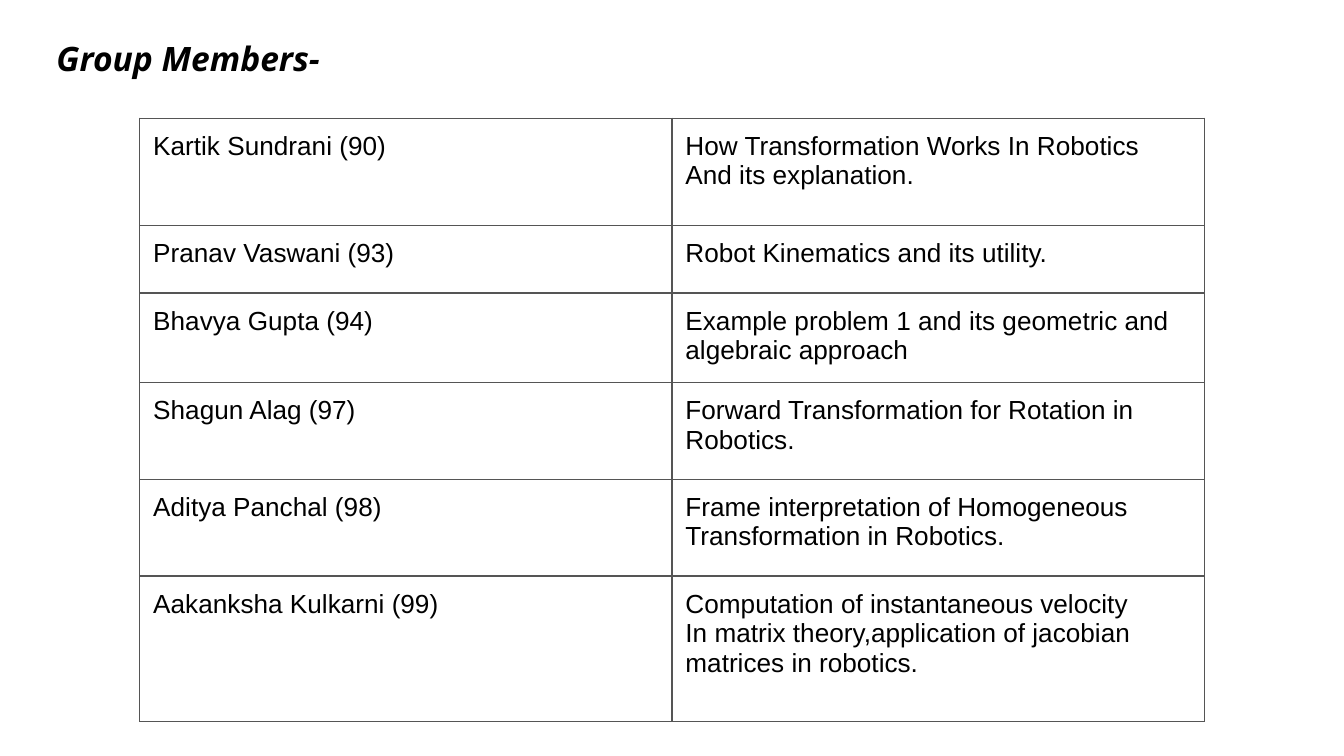
from lxml.etree import SubElement
from pptx import Presentation
from pptx.dml.color import RGBColor
from pptx.enum.text import MSO_ANCHOR, MSO_AUTO_SIZE, PP_ALIGN
from pptx.oxml.ns import qn
from pptx.util import Inches, Pt

BLACK = RGBColor(0x00, 0x00, 0x00)
GRAY = RGBColor(0x55, 0x55, 0x55)
INSET = Inches(0.1)

# Row height, member, lines of the topic
MEMBERS = [
    (0.8, "Kartik Sundrani (90)",
     ["How Transformation Works In Robotics", "And its explanation."]),
    (0.5, "Pranav Vaswani (93)", ["Robot Kinematics and its utility."]),
    (0.5, "Bhavya Gupta (94)",
     ["Example problem 1 and its geometric and algebraic approach"]),
    (0.72, "Shagun Alag (97)",
     ["Forward Transformation for Rotation in Robotics."]),
    (0.72, "Aditya Panchal (98)",
     ["Frame interpretation of Homogeneous Transformation in Robotics."]),
    (1.08, "Aakanksha Kulkarni (99)",
     ["Computation of instantaneous velocity",
      "In matrix theory,application of jacobian matrices in robotics."]),
]


def write_text(tf, lines, size, font, bold=False, italic=False):
    for i, line in enumerate(lines):
        p = tf.paragraphs[0] if i == 0 else tf.add_paragraph()
        p.alignment = PP_ALIGN.LEFT
        r = p.add_run()
        r.text = line
        r.font.size = Pt(size)
        r.font.name = font
        r.font.bold = bold
        r.font.italic = italic
        r.font.color.rgb = BLACK


def set_insets(obj):
    obj.margin_left = obj.margin_right = INSET
    obj.margin_top = obj.margin_bottom = INSET


def set_borders(cell, color, width):
    tc_pr = cell._tc.get_or_add_tcPr()
    for side in ("a:lnL", "a:lnR", "a:lnT", "a:lnB"):
        ln = SubElement(tc_pr, qn(side), w=str(Pt(width)))
        fill = SubElement(ln, qn("a:solidFill"))
        SubElement(fill, qn("a:srgbClr"), val=str(color))


def add_title(slide, text):
    sp = slide.shapes.title
    sp.left, sp.top = Inches(0.32), Inches(0.18)
    sp.width, sp.height = Inches(2.69), Inches(0.5)
    tf = sp.text_frame
    tf.word_wrap = True
    tf.auto_size = MSO_AUTO_SIZE.SHAPE_TO_FIT_TEXT
    tf.vertical_anchor = MSO_ANCHOR.TOP
    set_insets(tf)
    write_text(tf, [text], 18, "Open Sans", bold=True, italic=True)


def fill_cell(cell, lines):
    set_insets(cell)
    cell.vertical_anchor = MSO_ANCHOR.TOP
    set_borders(cell, GRAY, 0.75)
    cell.fill.background()
    write_text(cell.text_frame, lines, 14, "Arial")


def add_member_table(slide):
    height = sum(row[0] for row in MEMBERS)
    table = slide.shapes.add_table(
        len(MEMBERS), 2, Inches(1.04), Inches(0.88),
        Inches(7.92), Inches(height)).table
    table.first_row = table.horz_banding = False
    for i, (row_height, member, topic) in enumerate(MEMBERS):
        table.rows[i].height = Inches(row_height)
        fill_cell(table.cell(i, 0), [member])
        fill_cell(table.cell(i, 1), topic)


def main():
    prs = Presentation()
    prs.slide_width = Inches(10)
    prs.slide_height = prs.slide_width * 9 // 16  # widescreen
    slide = prs.slides.add_slide(prs.slide_layouts[5])  # Title Only
    add_member_table(slide)
    add_title(slide, "Group Members-")
    prs.save("out.pptx")


if __name__ == "__main__":
    main()
